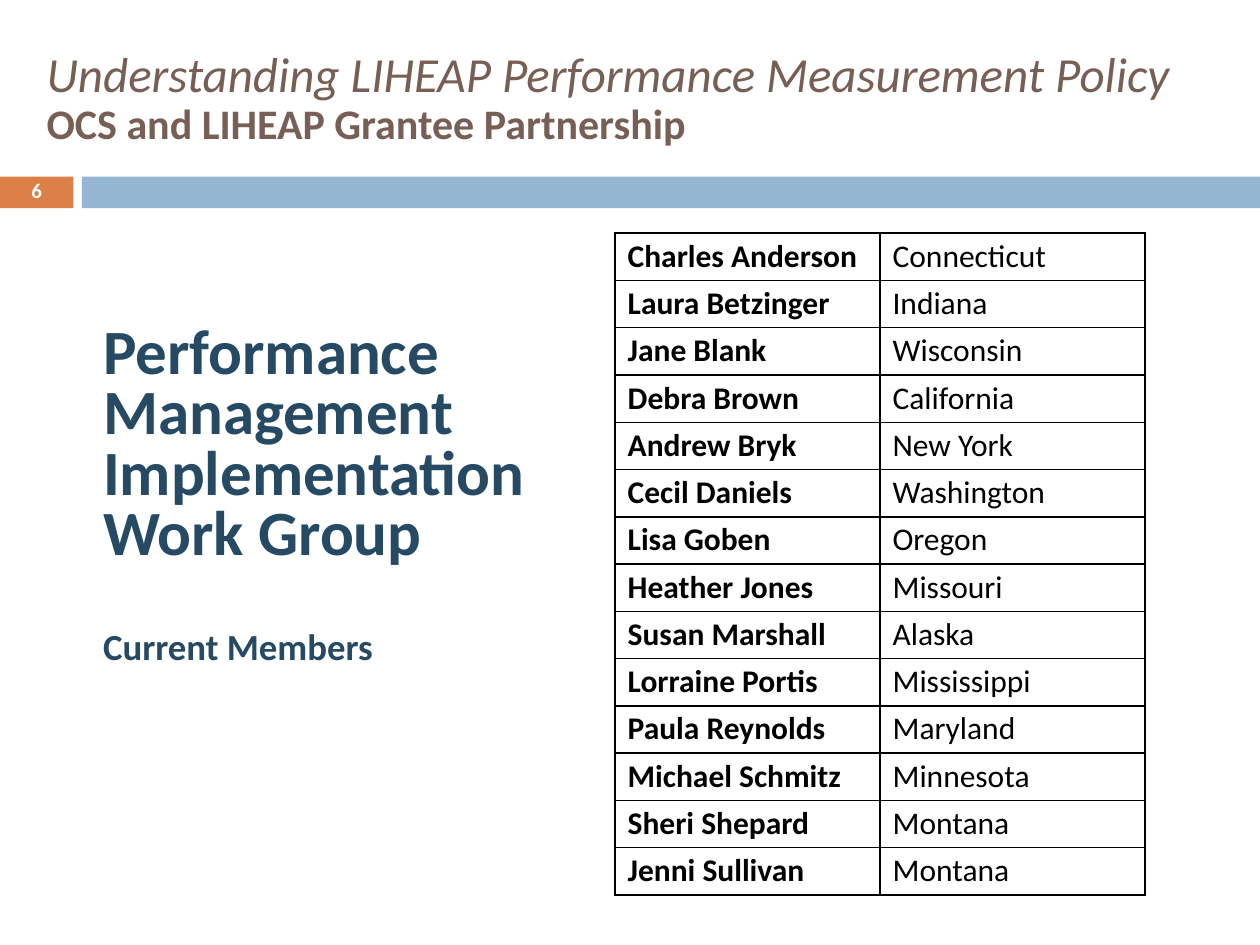
from dataclasses import dataclass

from lxml import etree
from pptx import Presentation
from pptx.dml.color import RGBColor
from pptx.enum.shapes import MSO_SHAPE
from pptx.enum.text import MSO_ANCHOR, PP_ALIGN
from pptx.oxml.ns import qn
from pptx.util import Cm, Pt

RECTANGLE = MSO_SHAPE.RECTANGLE
TOP = MSO_ANCHOR.TOP
MIDDLE = MSO_ANCHOR.MIDDLE
LEFT = PP_ALIGN.LEFT
CENTER = PP_ALIGN.CENTER


@dataclass(frozen=True)
class Theme:
    font: str = "Calibri"
    orange: str = "DD8047"
    blue: str = "94B6D2"
    brown: str = "775F55"
    navy: str = "264A64"
    black: str = "000000"
    white: str = "FFFFFF"
    title: float = 28
    subtitle: float = 24
    heading: float = 36
    subheading: float = 21
    body: float = 18
    number: float = 11.9
    border: float = 1


theme = Theme()


def write(paragraph, text, *, size, color, bold=False, italic=False,
          spacing=0.9, align=LEFT):
    paragraph.line_spacing = spacing
    paragraph.alignment = align
    run = paragraph.add_run()
    run.text = text
    run.font.name = theme.font
    run.font.size = Pt(size)
    run.font.bold = bold
    run.font.italic = italic
    run.font.color.rgb = RGBColor.from_string(color)


def add_text_frame(slide, left, top, width, height, anchor):
    box = slide.shapes.add_textbox(Cm(left), Cm(top), Cm(width), Cm(height))
    box.text_frame.word_wrap = True
    box.text_frame.vertical_anchor = anchor
    return box.text_frame


presentation = Presentation()
presentation.slide_width = Cm(25.4)
presentation.slide_height = Cm(19.05)
slide = presentation.slides.add_slide(presentation.slide_layouts[6])

for left, width, color in [(0, 1.48, theme.orange), (1.65, 23.75, theme.blue)]:
    bar = slide.shapes.add_shape(RECTANGLE, Cm(left), Cm(3.56), Cm(width), Cm(0.64))
    bar.shadow.inherit = False
    bar.fill.solid()
    bar.fill.fore_color.rgb = RGBColor.from_string(color)
    bar.line.fill.background()

members = [
    ("Charles Anderson", "Connecticut"),
    ("Laura Betzinger", "Indiana"),
    ("Jane Blank", "Wisconsin"),
    ("Debra Brown", "California"),
    ("Andrew Bryk", "New York"),
    ("Cecil Daniels", "Washington"),
    ("Lisa Goben", "Oregon"),
    ("Heather Jones", "Missouri"),
    ("Susan Marshall", "Alaska"),
    ("Lorraine Portis", "Mississippi"),
    ("Paula Reynolds", "Maryland"),
    ("Michael Schmitz", "Minnesota"),
    ("Sheri Shepard", "Montana"),
    ("Jenni Sullivan", "Montana"),
]
row_height = 0.94
table = slide.shapes.add_table(
    len(members), 2, Cm(12.4), Cm(4.7), Cm(10.68), Cm(row_height * len(members))
).table
table.first_row = False
table.horz_banding = False
for row, member in enumerate(members):
    for column, text in enumerate(member):
        cell = table.cell(row, column)
        cell.vertical_anchor = MIDDLE
        write(cell.text_frame.paragraphs[0], text, size=theme.body,
              color=theme.black, bold=column == 0)
        properties = cell._tc.get_or_add_tcPr()
        for side in ("a:lnL", "a:lnR", "a:lnT", "a:lnB"):
            border = etree.SubElement(properties, qn(side), w=str(Pt(theme.border)))
            fill = etree.SubElement(border, qn("a:solidFill"))
            etree.SubElement(fill, qn("a:srgbClr"), val=theme.black)
        cell.fill.background()

title = add_text_frame(slide, 0.69, 0.64, 23.67, 2.74, MIDDLE).paragraphs[0]
write(title, "Understanding LIHEAP Performance Measurement Policy",
      size=theme.title, color=theme.brown, italic=True)
title.add_line_break()
write(title, "OCS and LIHEAP Grantee Partnership",
      size=theme.subtitle, color=theme.brown, bold=True)

number = add_text_frame(slide, 0, 3.53, 1.48, 0.69, MIDDLE).paragraphs[0]
write(number, "6", size=theme.number, color=theme.white, bold=True,
      spacing=0.8, align=CENTER)

group = add_text_frame(slide, 1.83, 6.45, 10.41, 9.37, TOP)
heading_lines = ["Performance", "Management", "Implementation", "Work Group"]
for index, line in enumerate(heading_lines):
    paragraph = group.add_paragraph() if index else group.paragraphs[0]
    write(paragraph, line, size=theme.heading, color=theme.navy, bold=True, spacing=0.8)
paragraph = group.add_paragraph()
paragraph.space_before = Pt(37)
write(paragraph, "Current Members", size=theme.subheading, color=theme.navy,
      bold=True, spacing=0.8)

presentation.save("out.pptx")
